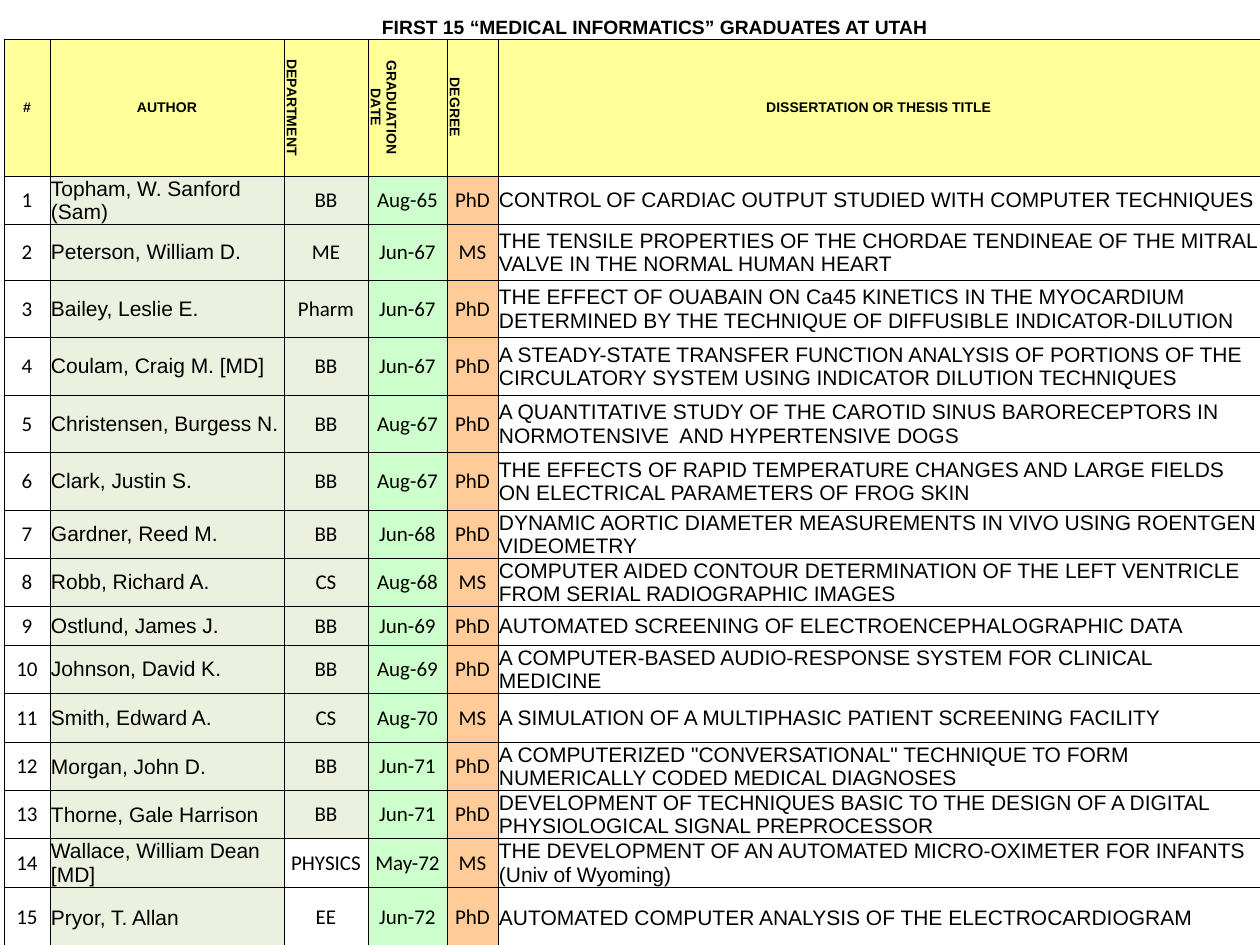
"""Build a one-slide table of the first 15 medical informatics graduates."""
from lxml.etree import SubElement
from pptx import Presentation
from pptx.dml.color import RGBColor
from pptx.enum.text import MSO_ANCHOR as Anchor, PP_ALIGN as Align
from pptx.oxml.ns import qn
from pptx.util import Pt

PX = 914400 // 126
NO_STYLE = "{2D5ABB26-0587-4C30-8999-92F81FD0307C}"
BLACK, YELLOW, SAGE, GREEN, ORANGE = "000000", "FFFF99", "EBF1DE", "CCFFCC", "FFCC99"
TITLE = "FIRST 15 “MEDICAL INFORMATICS” GRADUATES AT UTAH"
HEADERS = ["#", "AUTHOR", "DEPARTMENT", "GRADUATION DATE", "DEGREE", "DISSERTATION OR THESIS TITLE"]
COLUMN_WIDTHS = [46, 234, 84, 79, 51, 762]
ROW_HEIGHTS = [34, 137, 48, 56, 57, 58, 57, 58, 48, 48, 39, 48, 49, 48, 48, 49, 60]
GRADUATES = [
    ("Topham, W. Sanford (Sam)", "BB", "Aug-65", "PhD",
     "CONTROL OF CARDIAC OUTPUT STUDIED WITH COMPUTER TECHNIQUES"),
    ("Peterson, William D.", "ME", "Jun-67", "MS",
     "THE TENSILE PROPERTIES OF THE CHORDAE TENDINEAE OF THE MITRAL VALVE IN THE NORMAL HUMAN HEART"),
    ("Bailey, Leslie E.", "Pharm", "Jun-67", "PhD",
     "THE EFFECT OF OUABAIN ON Ca45 KINETICS IN THE MYOCARDIUM DETERMINED BY THE TECHNIQUE "
     "OF DIFFUSIBLE INDICATOR-DILUTION"),
    ("Coulam, Craig M. [MD]", "BB", "Jun-67", "PhD",
     "A STEADY-STATE TRANSFER FUNCTION ANALYSIS OF PORTIONS OF THE CIRCULATORY SYSTEM "
     "USING INDICATOR DILUTION TECHNIQUES"),
    ("Christensen, Burgess N.", "BB", "Aug-67", "PhD",
     "A QUANTITATIVE STUDY OF THE CAROTID SINUS BARORECEPTORS IN NORMOTENSIVE  AND HYPERTENSIVE DOGS"),
    ("Clark, Justin S.", "BB", "Aug-67", "PhD",
     "THE EFFECTS OF RAPID TEMPERATURE CHANGES AND LARGE FIELDS ON ELECTRICAL PARAMETERS OF FROG SKIN"),
    ("Gardner, Reed M.", "BB", "Jun-68", "PhD",
     "DYNAMIC AORTIC DIAMETER MEASUREMENTS IN VIVO USING ROENTGEN VIDEOMETRY"),
    ("Robb, Richard A.", "CS", "Aug-68", "MS",
     "COMPUTER AIDED CONTOUR DETERMINATION OF THE LEFT VENTRICLE FROM SERIAL RADIOGRAPHIC IMAGES"),
    ("Ostlund, James J.", "BB", "Jun-69", "PhD",
     "AUTOMATED SCREENING OF ELECTROENCEPHALOGRAPHIC DATA"),
    ("Johnson, David K.", "BB", "Aug-69", "PhD",
     "A COMPUTER-BASED AUDIO-RESPONSE SYSTEM FOR CLINICAL MEDICINE"),
    ("Smith, Edward A.", "CS", "Aug-70", "MS",
     "A SIMULATION OF A MULTIPHASIC PATIENT SCREENING FACILITY"),
    ("Morgan, John D.", "BB", "Jun-71", "PhD",
     "A COMPUTERIZED \"CONVERSATIONAL\" TECHNIQUE TO FORM NUMERICALLY CODED MEDICAL DIAGNOSES"),
    ("Thorne, Gale Harrison", "BB", "Jun-71", "PhD",
     "DEVELOPMENT OF TECHNIQUES BASIC TO THE DESIGN OF A DIGITAL PHYSIOLOGICAL SIGNAL PREPROCESSOR"),
    ("Wallace, William Dean [MD]", "PHYSICS", "May-72", "MS",
     "THE DEVELOPMENT OF AN AUTOMATED MICRO-OXIMETER FOR INFANTS (Univ of Wyoming)"),
    ("Pryor, T. Allan", "EE", "Jun-72", "PhD",
     "AUTOMATED COMPUTER ANALYSIS OF THE ELECTROCARDIOGRAM"),
]


def paint(fill, color):
    fill.solid()
    fill.fore_color.rgb = RGBColor.from_string(color)


def style_cell(cell, text, size, font="Arial", bold=False, color=None, align=Align.CENTER,
               anchor=Anchor.MIDDLE, edges="LRTB"):
    cell.text = text
    cell.margin_left = cell.margin_right = cell.margin_top = PX
    cell.margin_bottom = 0
    cell.vertical_anchor = anchor
    paragraph = cell.text_frame.paragraphs[0]
    paragraph.alignment = align
    paragraph.font.size = Pt(size)
    paragraph.font.name = font
    paragraph.font.bold = bold
    paint(paragraph.font.fill, BLACK)
    if not text:
        SubElement(paragraph._p, qn("a:endParaRPr"), sz=str(size * 100))
    properties = cell._tc.get_or_add_tcPr()
    for edge in edges:
        line = SubElement(properties, qn(f"a:ln{edge}"), w=str(Pt(0.5)))
        SubElement(SubElement(line, qn("a:solidFill")), qn("a:srgbClr"), val=BLACK)
    if color:
        paint(cell.fill, color)
    else:
        cell.fill.background()


presentation = Presentation()
presentation.slide_width = 1260 * PX
presentation.slide_height = 945 * PX
slide = presentation.slides.add_slide(presentation.slide_layouts[6])
shape = slide.shapes.add_table(len(ROW_HEIGHTS), len(COLUMN_WIDTHS), 4 * PX, 5 * PX,
                               sum(COLUMN_WIDTHS) * PX, sum(ROW_HEIGHTS) * PX)
table = shape.table
table.first_row = table.horz_banding = False
table._tbl.tblPr.find(qn("a:tableStyleId")).text = NO_STYLE
for column, width in zip(table.columns, COLUMN_WIDTHS):
    column.width = width * PX
for row, height in zip(table.rows, ROW_HEIGHTS):
    row.height = height * PX

table.cell(0, 1).merge(table.cell(0, 5))
for index in range(len(COLUMN_WIDTHS)):
    style_cell(table.cell(0, index), TITLE if index == 1 else "", 11, bold=True,
               anchor=Anchor.BOTTOM, edges="B")

for index, header in enumerate(HEADERS):
    cell = table.cell(1, index)
    style_cell(cell, header, 8, bold=True, color=YELLOW)
    if index in (2, 3, 4):
        cell._tc.tcPr.set("vert", "vert")

for number, graduate in enumerate(GRADUATES, 1):
    department_color = None if graduate[1] in ("PHYSICS", "EE") else SAGE
    colors = [None, SAGE, department_color, GREEN, ORANGE, None]
    for index, (text, color) in enumerate(zip((str(number), *graduate), colors)):
        is_prose = index in (1, 5)
        style_cell(table.cell(number + 1, index), text, 12, color=color,
                   font="Arial" if is_prose else "Calibri",
                   align=Align.LEFT if is_prose else Align.CENTER)

presentation.save("out.pptx")
